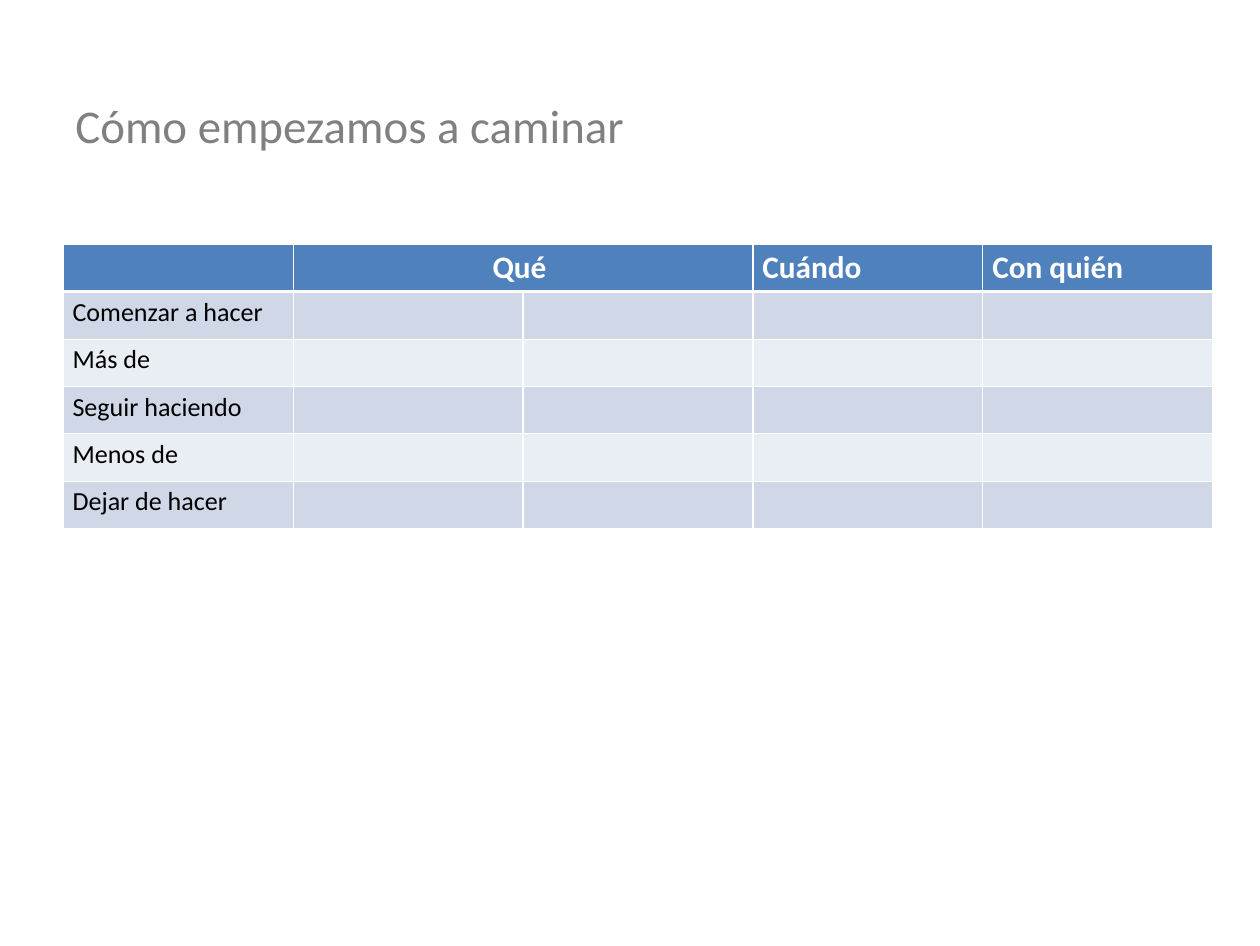
"""Builds a slide with a table for planning which habits to start, keep and stop."""
import lxml.etree
import pptx
import pptx.dml.color
import pptx.enum.text
import pptx.oxml.ns
import pptx.util

Pt = pptx.util.Pt
Align = pptx.enum.text.PP_ALIGN
Anchor = pptx.enum.text.MSO_ANCHOR


def color(hex_text):
    return pptx.dml.color.RGBColor.from_string(hex_text)


class PlanPage:
    font_name = "Calibri"
    white, gray, black = "FFFFFF", "808080", "000000"
    header_fill = "4F81BD"
    band_fills = ("D0D8E8", "E9EDF4")

    def __init__(self, deck):
        self.page = deck.slides.add_slide(deck.slide_layouts[5])

    def format(self, para, size, hex_text, bold=False, align=Align.LEFT):
        para.alignment = align
        para.font.name = self.font_name
        para.font.size = Pt(size)
        para.font.bold = bold
        para.font.color.rgb = color(hex_text)

    def title(self, text, left, top, width, height):
        box = self.page.shapes.title
        box.left, box.top, box.width, box.height = map(Pt, (left, top, width, height))
        frame = box.text_frame
        frame.text = text
        frame.word_wrap = True
        frame.auto_size = pptx.enum.text.MSO_AUTO_SIZE.NONE
        frame.vertical_anchor = Anchor.MIDDLE
        frame.margin_left = frame.margin_right = Pt(9.4)
        frame.margin_top = frame.margin_bottom = Pt(5)
        self.format(frame.paragraphs[0], 36, self.gray)

    def borders(self, cell, top, bottom):
        properties = cell._tc.get_or_add_tcPr()
        for side, width in (("L", 1), ("R", 1), ("T", top), ("B", bottom)):
            line = lxml.etree.SubElement(
                properties, pptx.oxml.ns.qn(f"a:ln{side}"), w=str(Pt(width)))
            fill = lxml.etree.SubElement(line, pptx.oxml.ns.qn("a:solidFill"))
            lxml.etree.SubElement(fill, pptx.oxml.ns.qn("a:srgbClr"), val=self.white)

    def cell(self, cell, text, row):
        is_header = row == 0
        self.borders(cell, 3 if row == 1 else 1, 3 if is_header else 1)
        cell.fill.solid()
        cell.fill.fore_color.rgb = color(
            self.header_fill if is_header else self.band_fills[(row - 1) % 2])
        if text:
            cell.text = text
            align = Align.CENTER if cell.is_merge_origin else Align.LEFT
            size, hex_text = (24, self.white) if is_header else (20, self.black)
            self.format(cell.text_frame.paragraphs[0], size, hex_text, is_header, align)

    def table(self, headings, actions, left, top, column_width, row_height):
        rows, columns = len(actions) + 1, len(headings)
        grid = self.page.shapes.add_table(
            rows, columns, Pt(left), Pt(top),
            Pt(column_width * columns), Pt(row_height * rows)).table
        for column in grid.columns:
            column.width = Pt(column_width)
        for row in grid.rows:
            row.height = Pt(row_height)
        grid.cell(0, 1).merge(grid.cell(0, 2))
        contents = [headings] + [[action] + [""] * (columns - 1) for action in actions]
        for row, texts in enumerate(contents):
            for column, text in enumerate(texts):
                self.cell(grid.cell(row, column), text, row)


def main():
    deck = pptx.Presentation()
    deck.slide_width, deck.slide_height = Pt(967.68), Pt(726.48)
    plan = PlanPage(deck)
    plan.title("Cómo empezamos a caminar", 48.5, 69, 871, 54)
    plan.table(
        ["", "Qué ", "", "Cuándo", "Con quién"],
        ["Comenzar a hacer", "Más de", "Seguir haciendo", "Menos de", "Dejar de hacer"],
        48.5, 187.5, 176.6, 36.4)
    deck.save("out.pptx")


if __name__ == "__main__":
    main()
